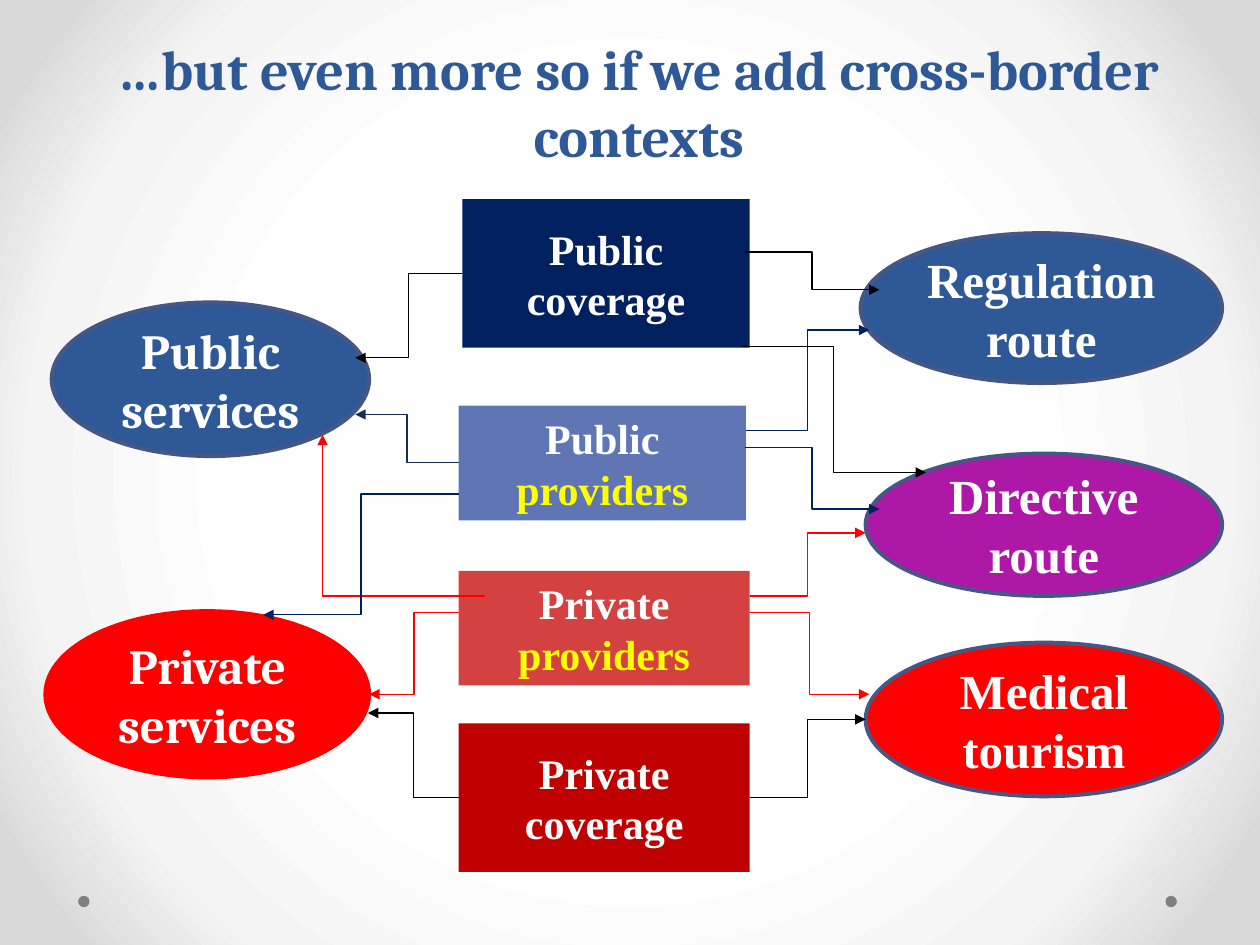
import dataclasses

import pptx
import pptx.dml.color
import pptx.enum.shapes
import pptx.enum.text
import pptx.oxml
import pptx.oxml.ns
import pptx.util

SHAPES = pptx.enum.shapes.MSO_SHAPE
ANCHOR = pptx.enum.text.MSO_ANCHOR
UNIT = 0.1  # inches per grid step: 100 columns by 75 rows
COLUMNS, ROWS = 100, 75


@dataclasses.dataclass(frozen=True)
class Theme:
    navy: str = "002060"
    blue: str = "2F5897"
    slate: str = "6076B4"
    edge: str = "475785"
    ink: str = "182C4B"
    red: str = "FF0000"
    coral: str = "D34141"
    crimson: str = "C00000"
    purple: str = "AE18A7"
    yellow: str = "FFFF00"
    white: str = "FFFFFF"
    black: str = "000000"
    gray: str = "808080"
    backdrop: tuple = ((50, "FFFFFF"), (76, "F4F4F4"), (92, "DADADA"))
    serif: str = "Cambria"
    roman: str = "Times New Roman"
    title_size: int = 32
    oval_size: int = 28
    block_size: int = 24
    oval_line: float = 2.25
    link_line: float = 0.75


THEME = Theme()


@dataclasses.dataclass(frozen=True)
class Box:
    left: float
    top: float
    width: float
    height: float

    def inner(self, left, top, width, height):
        return Box(self.left + left, self.top + top, width, height)

    def point(self, column, row):
        return grid(self.left + column), grid(self.top + row)

    def lengths(self):
        return [grid(n) for n in (self.left, self.top, self.width, self.height)]


def grid(steps):
    return pptx.util.Inches(steps * UNIT)


def rgb(value):
    return pptx.dml.color.RGBColor.from_string(value)


def write(frame, spans, font, size, anchor=ANCHOR.MIDDLE):
    for name, value in {"word_wrap": True, "vertical_anchor": anchor}.items():
        setattr(frame, name, value)
    para = frame.paragraphs[0]
    para.alignment = pptx.enum.text.PP_ALIGN.CENTER
    for text, color in spans:
        span = para.add_run()
        span.text = text
        formats = {"name": font, "size": pptx.util.Pt(size), "bold": True}
        for name, value in formats.items():
            setattr(span.font, name, value)
        span.font.color.rgb = rgb(color)


def add_figure(page, kind, box, fill, edge=None):
    figure = page.shapes.add_shape(kind, *box.lengths())
    figure.shadow.inherit = False
    figure.fill.solid()
    figure.fill.fore_color.rgb = rgb(fill)
    if edge:
        figure.line.color.rgb = rgb(edge)
        figure.line.width = pptx.util.Pt(THEME.oval_line)
    else:
        figure.line.fill.background()
    return figure


def add_backdrop(page):
    stops = "".join(
        f'<a:gs pos="{share * 1000}"><a:srgbClr val="{color}"/></a:gs>'
        for share, color in THEME.backdrop)
    page.background.fill.solid()
    holder = page.element.cSld.find(pptx.oxml.ns.qn("p:bg"))[0]
    holder.replace(holder[0], pptx.oxml.parse_xml(
        f'<a:gradFill {pptx.oxml.ns.nsdecls("a")} rotWithShape="1">'
        f'<a:gsLst>{stops}</a:gsLst><a:path path="circle">'
        '<a:fillToRect l="50000" t="50000" r="50000" b="50000"/>'
        '</a:path></a:gradFill>'))


def add_corner_dots(page, box):
    size = 0.9
    for left in (0, box.width - size):
        add_figure(page, SHAPES.OVAL, box.inner(left, 0, size, size), THEME.gray)


def add_title(page, box):
    frame = page.shapes.add_textbox(*box.lengths()).text_frame
    write(frame, [("…but even more so if we add cross-border contexts", THEME.blue)],
          THEME.serif, THEME.title_size, ANCHOR.BOTTOM)


def add_blocks(page, box):
    """Coverage and providers, stacked in the middle."""
    blocks = [
        (0.3, 0, 22.8, 11.8, THEME.navy, [("Public coverage", THEME.white)]),
        (0, 16.4, 22.8, 9.1, THEME.slate,
         [("Public", THEME.white), (" providers", THEME.yellow)]),
        (0, 29.5, 23.1, 9.1, THEME.coral,
         [("Private", THEME.white), (" providers", THEME.yellow)]),
        (0, 41.6, 23.1, 11.8, THEME.crimson, [("Private coverage", THEME.white)]),
    ]
    for left, top, width, height, fill, spans in blocks:
        block = add_figure(page, SHAPES.RECTANGLE,
                           box.inner(left, top, width, height), fill)
        write(block.text_frame, spans, THEME.roman, THEME.block_size)


def add_ovals(page, box, ovals, font):
    """A column of ovals, flush with the right side of the box."""
    for top, width, height, fill, edge, text in ovals:
        oval = add_figure(page, SHAPES.OVAL,
                          box.inner(box.width - width, top, width, height),
                          fill, edge)
        write(oval.text_frame, [(text, THEME.white)], font, THEME.oval_size)


def add_links(page, box, links):
    """Elbow arrows; a link with a single bend is marked True."""
    for start, end, color, single_bend in links:
        link = page.shapes.add_connector(
            pptx.enum.shapes.MSO_CONNECTOR.ELBOW, *box.point(*start), *box.point(*end))
        link.line.color.rgb = rgb(color)
        link.line.width = pptx.util.Pt(THEME.link_line)
        properties = link.element.spPr
        if single_bend:
            properties.find(pptx.oxml.ns.qn("a:prstGeom")).set("prst", "bentConnector2")
            # Half a turn stands for both flips
            frame = properties.find(pptx.oxml.ns.qn("a:xfrm"))
            for flip in ("flipH", "flipV"):
                frame.attrib.pop(flip, None)
            frame.set("rot", "10800000")
        namespace = pptx.oxml.ns.nsdecls("a")
        link.line._get_or_add_ln().append(
            pptx.oxml.parse_xml(f'<a:tailEnd {namespace} type="triangle"/>'))
        properties.append(pptx.oxml.parse_xml(f"<a:effectLst {namespace}/>"))


def main():
    deck = pptx.Presentation()
    deck.slide_width, deck.slide_height = grid(COLUMNS), grid(ROWS)
    page = deck.slides.add_slide(deck.slide_layouts[6])

    # Backdrop and heading
    add_backdrop(page)
    add_corner_dots(page, Box(6.2, 71.1, 87.2, 0.9))
    add_title(page, Box(4.4, 1.5, 92.6, 12.4))

    # Three columns: services, blocks, routes
    body_top, body_height = 15.8, 53.4
    services = Box(3.6, body_top, 25.7, body_height)
    blocks = Box(36.4, body_top, 23.1, body_height)
    routes = Box(68.3, body_top, 28.7, body_height)
    add_blocks(page, blocks)
    add_ovals(page, services, [
        (8.2, 25.2, 12.2, THEME.blue, THEME.edge, "Public services"),
        (32.7, 25.7, 13.2, THEME.red, THEME.red, "Private services"),
    ], THEME.serif)
    add_ovals(page, routes, [
        (2.7, 28.7, 11.9, THEME.blue, THEME.edge, "Regulation route"),
        (20.2, 28.3, 11.3, THEME.purple, THEME.edge, "Directive route"),
        (35.2, 28.3, 12.2, THEME.red, THEME.edge, "Medical tourism"),
    ], THEME.roman)

    # Arrows, measured from the top left of the blocks
    add_links(page, blocks, [
        # to the services
        ((0.3, 5.9), (-8.2, 12.6), THEME.black, False),
        ((0, 20.9), (-8.2, 17.1), THEME.ink, False),
        ((2.1, 31.5), (-10.8, 18.7), THEME.red, True),
        ((0, 47.5), (-7.2, 40.8), THEME.black, False),
        ((0, 32.8), (-7.1, 39.3), THEME.red, False),
        ((0, 23.4), (-15.5, 33), THEME.navy, False),
        # to the routes
        ((22.7, 4.2), (33.4, 7.2), THEME.black, False),
        ((22.4, 11.7), (37.1, 21.7), THEME.black, False),
        ((22.8, 18.4), (32.6, 10.4), THEME.navy, False),
        ((22.7, 19.7), (33.4, 24.6), THEME.navy, False),
        ((23.1, 31.5), (32.3, 26.5), THEME.red, False),
        ((23.1, 32.8), (32.6, 39.3), THEME.red, False),
        ((23.1, 47.5), (32.3, 41.3), THEME.black, False),
    ])
    deck.save("out.pptx")


if __name__ == "__main__":
    main()
